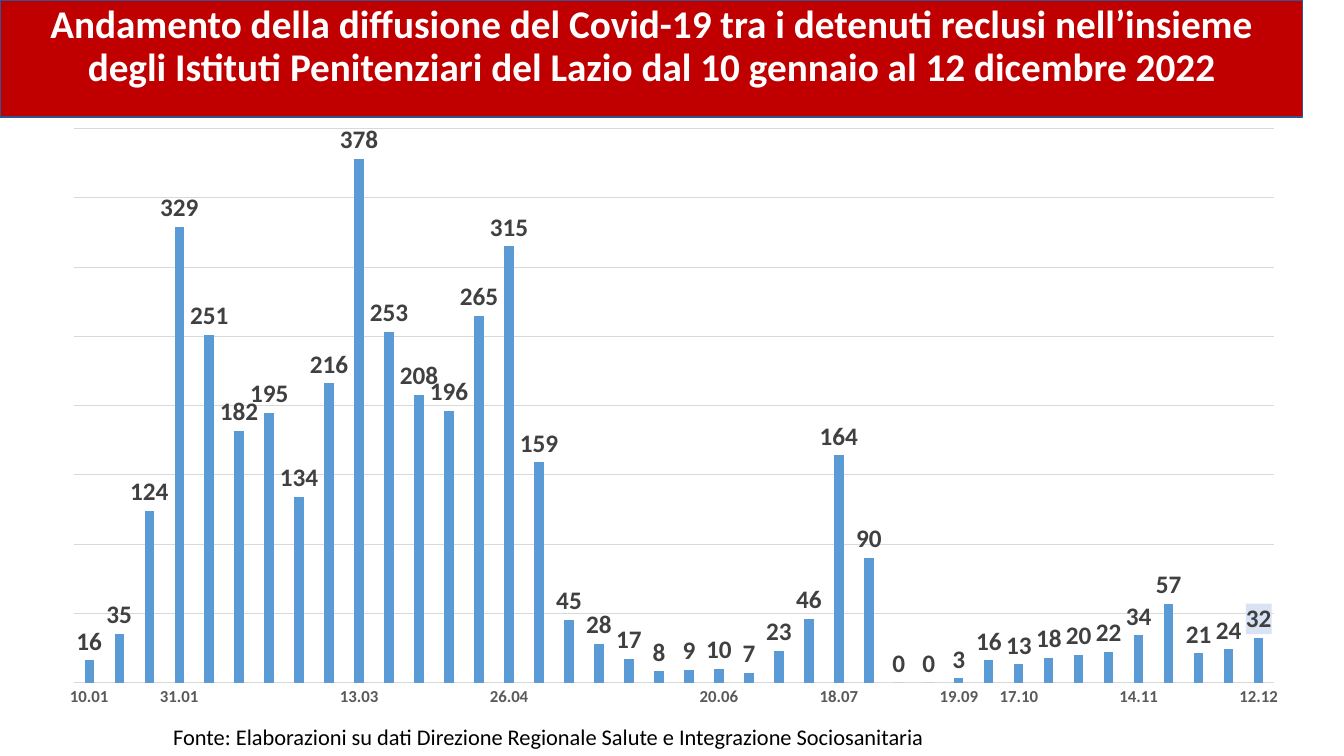
import pptx
import pptx.chart.data
import pptx.dml.color
import pptx.enum.chart
import pptx.enum.text
import pptx.oxml
import pptx.oxml.ns
import pptx.util

# Content
TITLE = ("Andamento della diffusione del Covid-19 tra i detenuti reclusi nell’insieme "
         "degli Istituti Penitenziari del Lazio dal 10 gennaio al 12 dicembre 2022")
SOURCE = "Fonte: Elaborazioni su dati Direzione Regionale Salute e Integrazione Sociosanitaria"
CASES = [16, 35, 124, 329, 251, 182, 195, 134, 216, 378,
         253, 208, 196, 265, 315, 159, 45, 28, 17, 8,
         9, 10, 7, 23, 46, 164, 90, 0, 0, 3,
         16, 13, 18, 20, 22, 34, 57, 21, 24, 32]
DATES = {0: "10.01", 3: "31.01", 9: "13.03", 14: "26.04", 21: "20.06", 25: "18.07",
         29: "19.09", 31: "17.10", 35: "14.11", 39: "12.12"}

# Layout in inches; the plot area in shares of the chart
WIDTH, HEIGHT = 13.33, 7.5
BANNER = (0, 0, 12.92, 1.16)
CHART = (0.45, 1.17, 12.47, 5.96)
FOOTER = (1.62, 7.13, 7.84, 0.37)
PLOT = {"x": 0.023, "y": 0.018, "w": 0.954, "h": 0.922}
GRID, BAR, HIGHLIGHT = "D9D9D9", "5B9BD5", "DAE3F3"


def rgb(value):
    return pptx.dml.color.RGBColor.from_string(value)


def inches(box):
    return [pptx.util.Inches(v) for v in box]


def style_font(font, size, color, bold=True):
    font.name, font.size, font.bold = "Calibri", pptx.util.Pt(size), bold
    font.color.rgb = rgb(color)


def style_line(line, color, width):
    line.color.rgb = rgb(color)
    line.width = pptx.util.Pt(width)


def chart_xml(body):
    return pptx.oxml.parse_xml(body.replace(
        ">", " " + pptx.oxml.ns.nsdecls("c", "a") + ">", 1))


prs = pptx.Presentation()
prs.slide_width, prs.slide_height = inches((WIDTH, HEIGHT))
s = prs.slides.add_slide(prs.slide_layouts[5])

# Title banner
title = s.shapes.title
title.left, title.top, title.width, title.height = inches(BANNER)
title.fill.solid()
title.fill.fore_color.rgb = rgb("C00000")
style_line(title.line, "325491", 1)
tf = title.text_frame
tf.text = TITLE
tf.word_wrap = True
tf.auto_size = pptx.enum.text.MSO_AUTO_SIZE.NONE
tf.vertical_anchor = pptx.enum.text.MSO_ANCHOR.TOP
p = tf.paragraphs[0]
p.alignment = pptx.enum.text.PP_ALIGN.CENTER
p.line_spacing = 0.9
p.space_before = pptx.util.Pt(10)
style_font(p.runs[0].font, 28, "FFFFFF")

# Source note
tf = s.shapes.add_textbox(*inches(FOOTER)).text_frame
tf.text = SOURCE
tf.word_wrap = False
tf.auto_size = pptx.enum.text.MSO_AUTO_SIZE.SHAPE_TO_FIT_TEXT
style_font(tf.paragraphs[0].runs[0].font, 16, "000000", bold=False)

# Column chart
data = pptx.chart.data.CategoryChartData()
data.categories = [DATES.get(i, "") for i in range(len(CASES))]
data.add_series("Detenuti positivi", CASES)
chart = s.shapes.add_chart(pptx.enum.chart.XL_CHART_TYPE.COLUMN_CLUSTERED,
                           *inches(CHART), data).chart
chart.has_legend = chart.has_title = False
style_font(chart.font, 20, "000000")
plot = chart.plots[0]
plot.gap_width, plot.overlap, plot.vary_by_categories = 219, -27, False
bars = plot.series[0]
bars.format.fill.solid()
bars.format.fill.fore_color.rgb = rgb(BAR)

# Axes
dates, cases = chart.category_axis, chart.value_axis
dates.major_tick_mark = dates.minor_tick_mark = pptx.enum.chart.XL_TICK_MARK.NONE
style_font(dates.tick_labels.font, 12, "595959")
style_line(dates.format.line, GRID, 0.75)
cases.visible = False
cases.minimum_scale, cases.maximum_scale, cases.major_unit = 0, 400, 50
cases.has_major_gridlines = True
style_line(cases.major_gridlines.format.line, GRID, 0.75)
chart_space = chart.element
chart_space.xpath(".//c:catAx/c:txPr/a:bodyPr")[0].set("rot", "-60000000")
chart_space.xpath(".//c:catAx/c:noMultiLvlLbl")[0].addprevious(
    chart_xml('<c:tickLblSkip val="1"/>'.replace("/>", "></c:tickLblSkip>")))

# Value labels, the latest one highlighted
last_label = bars.points[len(CASES) - 1].data_label
for labels in (bars.data_labels, last_label):
    style_font(labels.font, 18, "404040")
    labels.position = pptx.enum.chart.XL_LABEL_POSITION.OUTSIDE_END
bars.data_labels.show_value = True
chart_space.xpath(".//c:dLbl/c:txPr")[0].addprevious(chart_xml(
    f'<c:spPr><a:solidFill><a:srgbClr val="{HIGHLIGHT}"/></a:solidFill></c:spPr>'))

# Plot area position
for old in chart_space.xpath(".//c:plotArea/c:layout"):
    old.getparent().remove(old)
shares = "".join(f'<c:{k} val="{v}"/>' for k, v in PLOT.items())
chart_space.xpath(".//c:plotArea")[0].insert(0, chart_xml(
    '<c:layout><c:manualLayout><c:layoutTarget val="inner"/>'
    f'<c:xMode val="edge"/><c:yMode val="edge"/>{shares}</c:manualLayout></c:layout>'))

prs.save("out.pptx")
